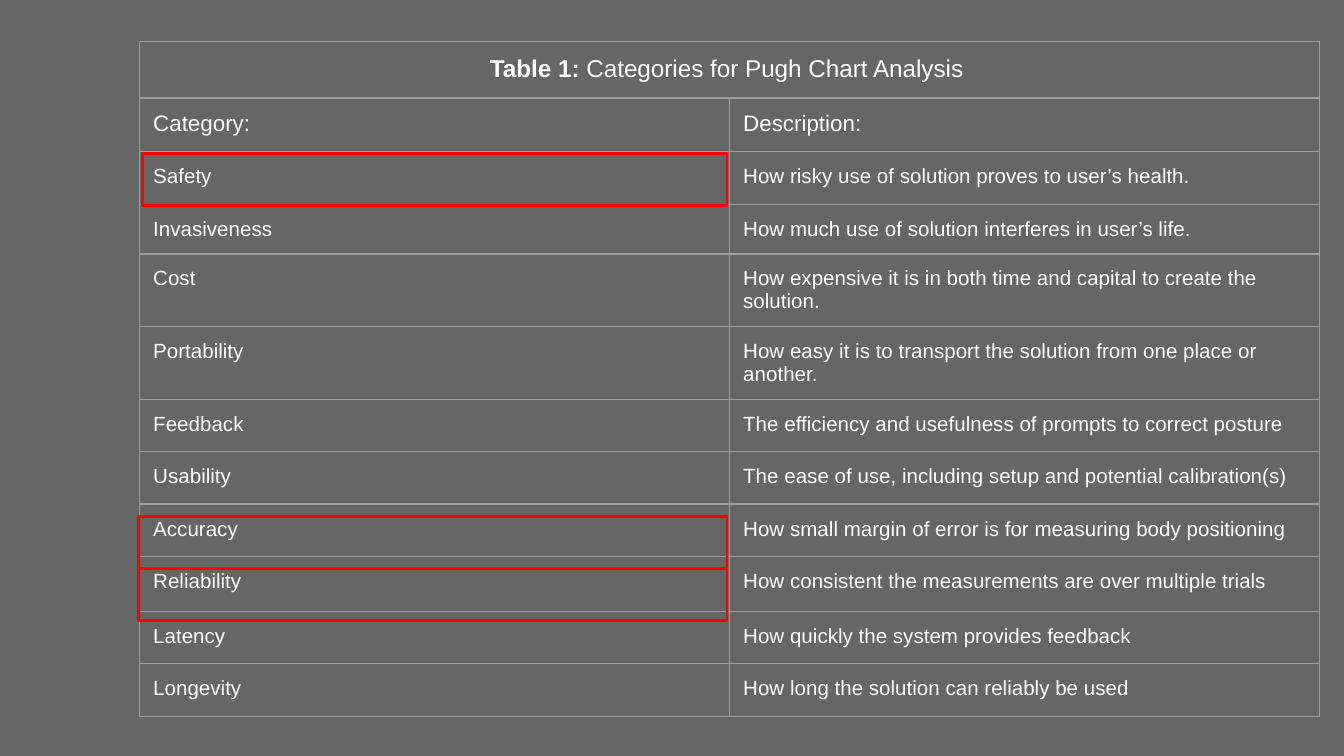
from dataclasses import dataclass

from lxml import etree
from pptx import Presentation
from pptx.dml.color import RGBColor
from pptx.enum import shapes, text
from pptx.oxml import ns
from pptx.util import Inches, Pt

BACKGROUND = RGBColor(0x66, 0x66, 0x66)
WHITE = RGBColor(0xFF, 0xFF, 0xFF)
BORDER = RGBColor(0x9E, 0x9E, 0x9E)
RED = RGBColor(0xFF, 0x00, 0x00)
FONT = "Arial"
SLIDE_WIDTH = 10
SLIDE_HEIGHT = SLIDE_WIDTH * 9 / 16
TABLE_LEFT, TABLE_TOP = 1.04, 0.31
COLUMN_WIDTH = 4.39
MARGIN = 0.1


@dataclass(frozen=True)
class Row:
    category: str
    description: str
    height: float = 0.39
    size: float = 11


@dataclass(frozen=True)
class Highlight:
    left: float
    top: float
    width: float
    height: float = 0.39


TITLE_HEIGHT = 0.42
ROWS = [
    Row("Category:", "Description:", 0.4, 12),
    Row("Safety", "How risky use of solution proves to user’s health."),
    Row("Invasiveness", "How much use of solution interferes in user’s life.", 0.36),
    Row("Cost", "How expensive it is in both time and capital to create the solution."),
    Row("Portability", "How easy it is to transport the solution from one place or another."),
    Row("Feedback", "The efficiency and usefulness of prompts to correct posture"),
    Row("Usability", "The ease of use, including setup and potential calibration(s)"),
    Row("Accuracy", "How small margin of error is for measuring body positioning"),
    Row("Reliability", "How consistent the measurements are over multiple trials", 0.41),
    Row("Latency", "How quickly the system provides feedback"),
    Row("Longevity", "How long the solution can reliably be used"),
]
HIGHLIGHTS = [
    Highlight(1.06, 1.14, 4.35),
    Highlight(1.03, 3.84, 4.38),
    Highlight(1.03, 4.23, 4.38),
]


def format_run(run, size: float, bold: bool = False) -> None:
    run.font.name = FONT
    run.font.size = Pt(size)
    run.font.bold = bold
    run.font.color.rgb = WHITE


def style_cell(cell) -> None:
    cell.fill.background()
    cell.margin_left = cell.margin_right = Inches(MARGIN)
    cell.margin_top = cell.margin_bottom = Inches(MARGIN)
    properties = cell._tc.get_or_add_tcPr()
    for index, side in enumerate(("lnL", "lnR", "lnT", "lnB")):
        line = etree.Element(ns.qn(f"a:{side}"), w=str(Pt(0.75)))
        fill = etree.SubElement(line, ns.qn("a:solidFill"))
        etree.SubElement(fill, ns.qn("a:srgbClr"), val=str(BORDER))
        properties.insert(index, line)


def add_title(cell) -> None:
    paragraph = cell.text_frame.paragraphs[0]
    paragraph.alignment = text.PP_ALIGN.CENTER
    for words, bold in (("Table 1:", True), (" Categories for Pugh Chart Analysis ", False)):
        run = paragraph.add_run()
        run.text = words
        format_run(run, 13, bold)


def add_category_table(slide) -> None:
    heights = [TITLE_HEIGHT] + [row.height for row in ROWS]
    table = slide.shapes.add_table(
        len(heights), 2, Inches(TABLE_LEFT), Inches(TABLE_TOP),
        Inches(2 * COLUMN_WIDTH), Inches(sum(heights)),
    ).table
    table.first_row = table.horz_banding = False
    for column in table.columns:
        column.width = Inches(COLUMN_WIDTH)
    for table_row, height in zip(table.rows, heights):
        table_row.height = Inches(height)
    for cell in table.iter_cells():
        style_cell(cell)

    table.cell(0, 0).merge(table.cell(0, 1))
    add_title(table.cell(0, 0))
    for index, row in enumerate(ROWS, start=1):
        for column, words in enumerate((row.category, row.description)):
            text_frame = table.cell(index, column).text_frame
            text_frame.text = words
            format_run(text_frame.paragraphs[0].runs[0], row.size)


def add_highlight(slide, highlight: Highlight) -> None:
    shape = slide.shapes.add_shape(
        shapes.MSO_SHAPE.RECTANGLE, Inches(highlight.left), Inches(highlight.top),
        Inches(highlight.width), Inches(highlight.height),
    )
    shape.shadow.inherit = False
    shape.fill.background()
    shape.line.color.rgb = RED
    shape.line.width = Pt(1.5)


def main() -> None:
    presentation = Presentation()
    presentation.slide_width = Inches(SLIDE_WIDTH)
    presentation.slide_height = Inches(SLIDE_HEIGHT)
    slide = presentation.slides.add_slide(presentation.slide_layouts[6])
    slide.background.fill.solid()
    slide.background.fill.fore_color.rgb = BACKGROUND
    add_category_table(slide)
    for highlight in HIGHLIGHTS:
        add_highlight(slide, highlight)
    presentation.save("out.pptx")


if __name__ == "__main__":
    main()
